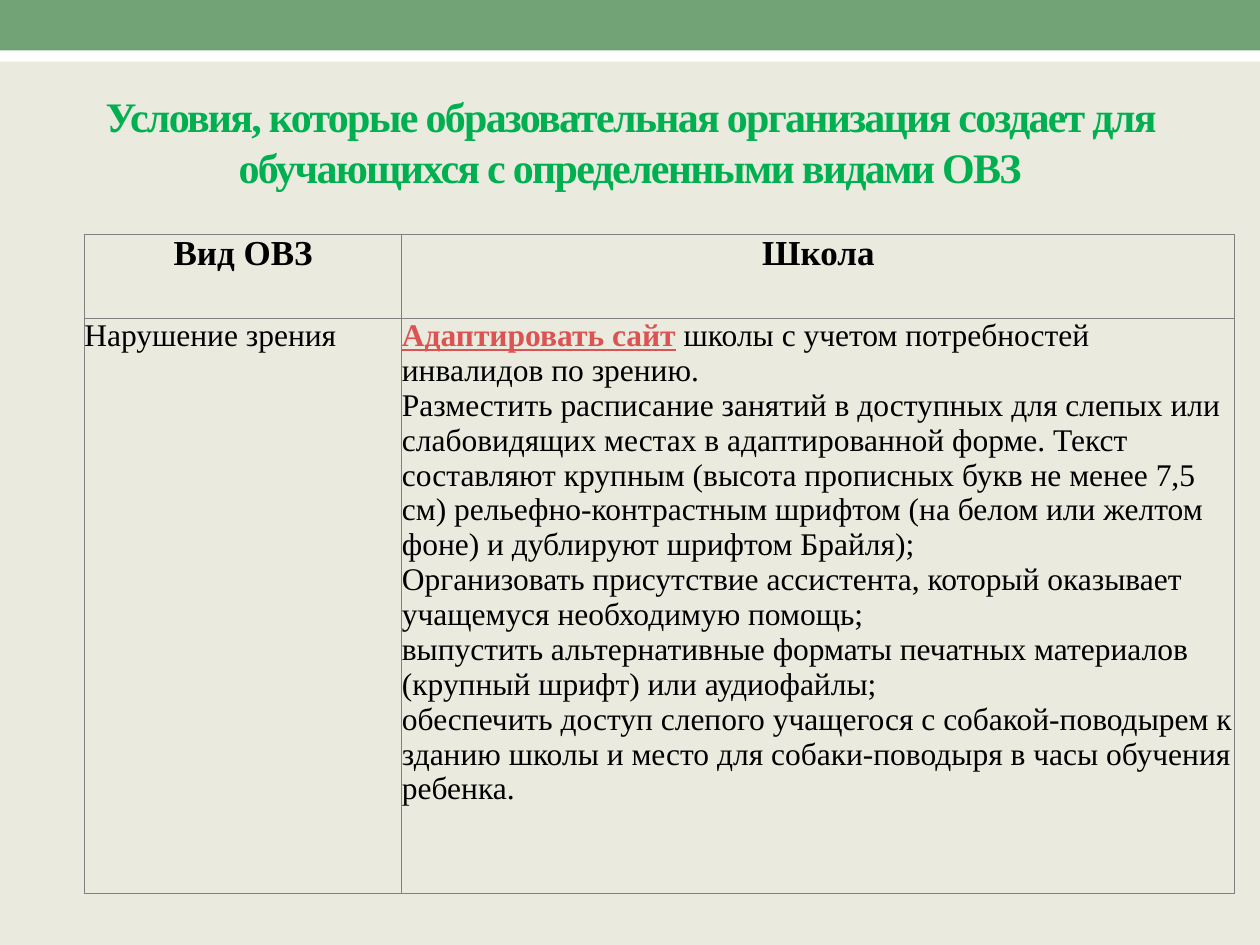
from dataclasses import dataclass

from pptx import Presentation
from pptx import util as u
from pptx.dml.color import RGBColor
from pptx.enum import shapes, text
from pptx.oxml import parse_xml
from pptx.oxml.ns import nsdecls

FACE = "Times New Roman"
BLACK = "000000"


@dataclass
class Band:
    top: float
    high: float
    hue: str


@dataclass
class Cell:
    lines: list[str]
    size: int = 18
    bold: bool = False
    mid: bool = False
    lead: str = ""


BANDS = [Band(0.24, 0.25, "FFFFFF"), Band(0, 0.4, "72A376")]
TITLE = "Условия, которые образовательная организация создает для обучающихся с определенными видами ОВЗ"
COLS = [2.52, 6.61]
ROWS = [0.63, 4.56]
CELLS = [
    [
        Cell(["Вид ОВЗ"], 20, True, True),
        Cell(["Школа\n"], 20, True, True),
    ],
    [
        Cell(["Нарушение зрения"]),
        Cell(
            [
                " школы с учетом потребностей инвалидов по зрению.",
                "Разместить расписание занятий в доступных для слепых или слабовидящих местах "
                "в адаптированной форме. Текст составляют крупным (высота прописных букв "
                "не менее 7,5 см) рельефно-контрастным шрифтом (на белом или желтом фоне) "
                "и дублируют шрифтом Брайля);",
                "Организовать присутствие ассистента, который оказывает учащемуся необходимую помощь;",
                "выпустить альтернативные форматы печатных материалов (крупный шрифт) или аудиофайлы;",
                "обеспечить доступ слепого учащегося с собакой-поводырем к зданию школы "
                "и место для собаки-поводыря в часы обучения ребенка.",
            ],
            lead="Адаптировать сайт",
        ),
    ],
]


def paint(fill, hue: str) -> None:
    fill.solid()
    fill.fore_color.rgb = RGBColor.from_string(hue)


def style(font, size: int, bold: bool, hue: str) -> None:
    font.name = FACE
    font.size = u.Pt(size)
    font.bold = bold
    paint(font.fill, hue)


def draw_band(slide, band: Band) -> None:
    box = slide.shapes.add_shape(
        shapes.MSO_SHAPE.RECTANGLE, 0, u.Inches(band.top), u.Inches(10), u.Inches(band.high)
    )
    box.shadow.inherit = False
    paint(box.fill, band.hue)
    box.line.fill.background()


def draw_title(slide) -> None:
    box = slide.shapes.add_textbox(u.Inches(0.5), u.Inches(0.58), u.Inches(9), u.Inches(1.08))
    frame = box.text_frame
    frame.word_wrap = True
    frame.vertical_anchor = text.MSO_ANCHOR.MIDDLE
    para = frame.paragraphs[0]
    para.alignment = text.PP_ALIGN.CENTER
    run = para.add_run()
    run.text = TITLE
    style(para.font, 24, True, "00B050")
    run.font._element.set("spc", "-100")


def edge(cell) -> None:
    props = cell._tc.get_or_add_tcPr()
    for spot, side in enumerate(("lnL", "lnR", "lnT", "lnB")):
        line = parse_xml(
            f'<a:{side} {nsdecls("a")} w="{u.Pt(0.6)}"><a:solidFill>'
            f'<a:srgbClr val="808080"/></a:solidFill></a:{side}>'
        )
        props.insert(spot, line)


def fill_cell(cell, data: Cell) -> None:
    cell.margin_left = cell.margin_right = cell.margin_top = cell.margin_bottom = 0
    cell.fill.background()
    edge(cell)
    frame = cell.text_frame
    for spot, words in enumerate(data.lines):
        para = frame.add_paragraph() if spot else frame.paragraphs[0]
        para.text = words
        para.alignment = text.PP_ALIGN.CENTER if data.mid else text.PP_ALIGN.LEFT
        style(para.font, data.size, data.bold, BLACK)
    if data.lead:
        para = frame.paragraphs[0]
        rest = para.text
        para.clear()
        link = para.add_run()
        link.text = data.lead
        link.font.bold = link.font.underline = True
        paint(link.font.fill, "DB5353")
        para.add_run().text = rest


def draw_table(slide) -> None:
    grid = slide.shapes.add_table(
        len(ROWS), len(COLS), u.Inches(0.67), u.Inches(1.86),
        u.Inches(sum(COLS)), u.Inches(sum(ROWS)),
    ).table
    grid.first_row = grid.horz_banding = False
    for col, wide in zip(grid.columns, COLS):
        col.width = u.Inches(wide)
    for row, high, line in zip(grid.rows, ROWS, CELLS):
        row.height = u.Inches(high)
        for cell, data in zip(row.cells, line):
            fill_cell(cell, data)


def main() -> None:
    deck = Presentation()
    deck.slide_width, deck.slide_height = u.Inches(10), u.Inches(7.5)
    slide = deck.slides.add_slide(deck.slide_layouts[6])
    paint(slide.background.fill, "EAEBDE")
    for band in BANDS:
        draw_band(slide, band)
    draw_title(slide)
    draw_table(slide)
    deck.save("out.pptx")


if __name__ == "__main__":
    main()
